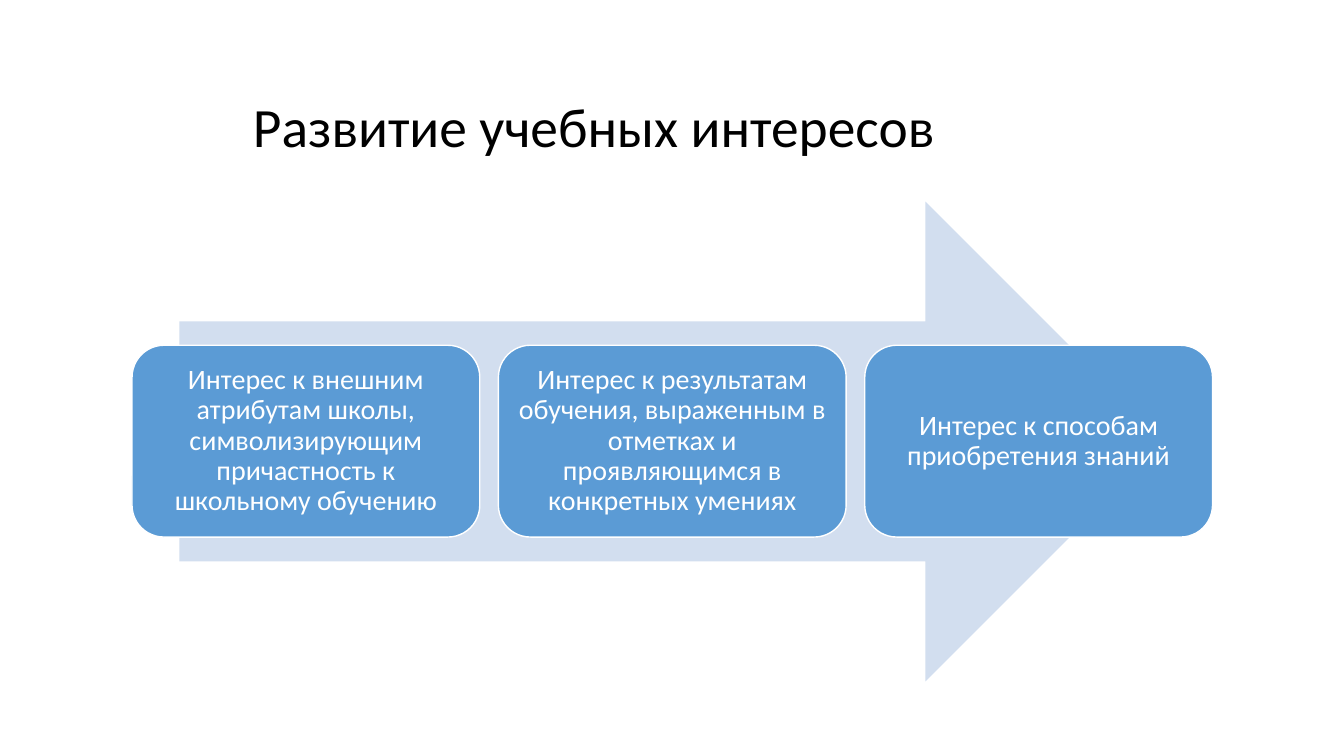
"""Build a slide on the development of learning interests."""
from dataclasses import dataclass

import pptx
import pptx.dml.color
import pptx.enum.shapes
import pptx.enum.text
import pptx.util


@dataclass(frozen=True)
class Theme:
    """Colours and type sizes of the slide."""
    font: str = "Calibri"
    title_size: float = 39.6
    stage_size: float = 20
    title_color: str = "000000"
    stage_text: str = "FFFFFF"
    stage_fill: str = "5B9BD5"
    stage_line: str = "FFFFFF"
    arrow_fill: str = "D2DEEF"


class SlideBuilder:
    """Add styled elements to one slide, with lengths in points."""

    def __init__(self, presentation, theme):
        """Start a title-only slide."""
        self.theme = theme
        self.slide = presentation.slides.add_slide(presentation.slide_layouts[5])

    def set_text(self, shape, text, size, color, alignment, inset):
        """Write one centred-vertically paragraph into a shape."""
        frame = shape.text_frame
        frame.text = text
        frame.word_wrap = True
        frame.auto_size = pptx.enum.text.MSO_AUTO_SIZE.NONE
        frame.vertical_anchor = pptx.enum.text.MSO_ANCHOR.MIDDLE
        frame.margin_left = frame.margin_right = pptx.util.Pt(inset)
        frame.margin_top = frame.margin_bottom = pptx.util.Pt(min(inset, 5.76))
        paragraph = frame.paragraphs[0]
        paragraph.alignment = alignment
        paragraph.line_spacing = 0.9
        font = paragraph.runs[0].font
        font.name = self.theme.font
        font.size = pptx.util.Pt(size)
        font.color.rgb = pptx.dml.color.RGBColor.from_string(color)

    def title(self, text, left, top, width, height):
        """Place and format the title placeholder."""
        shape = self.slide.shapes.title
        shape.left, shape.top = pptx.util.Pt(left), pptx.util.Pt(top)
        shape.width, shape.height = pptx.util.Pt(width), pptx.util.Pt(height)
        self.set_text(shape, text, self.theme.title_size, self.theme.title_color,
                      pptx.enum.text.PP_ALIGN.LEFT, 7.2)

    def filled_shape(self, kind, fill, left, top, width, height):
        """Add a flat preset shape without an outline."""
        box = [pptx.util.Pt(length) for length in (left, top, width, height)]
        shape = self.slide.shapes.add_shape(kind, *box)
        shape.shadow.inherit = False
        shape.fill.solid()
        shape.fill.fore_color.rgb = pptx.dml.color.RGBColor.from_string(fill)
        shape.line.fill.background()
        return shape

    def arrow(self, left, top, width, height):
        """Add the broad background arrow."""
        self.filled_shape(pptx.enum.shapes.MSO_SHAPE.RIGHT_ARROW,
                          self.theme.arrow_fill, left, top, width, height)

    def stage(self, text, left, top, width, height):
        """Add one rounded stage with its text."""
        shape = self.filled_shape(pptx.enum.shapes.MSO_SHAPE.ROUNDED_RECTANGLE,
                                  self.theme.stage_fill, left, top, width, height)
        shape.line.color.rgb = pptx.dml.color.RGBColor.from_string(self.theme.stage_line)
        shape.line.width = pptx.util.Pt(1)
        self.set_text(shape, text, self.theme.stage_size, self.theme.stage_text,
                      pptx.enum.text.PP_ALIGN.CENTER, 5.76)


def main():
    """Build and save the presentation."""
    presentation = pptx.Presentation()
    presentation.slide_width = pptx.util.Pt(960)
    presentation.slide_height = pptx.util.Pt(540)
    builder = SlideBuilder(presentation, Theme())
    builder.title("Развитие учебных интересов", 173.5, 70.5, 828, 44.6)
    builder.arrow(128.2, 144, 704.2, 342.7)
    stages = (
        "Интерес к внешним атрибутам школы, символизирующим причастность к школьному обучению",
        "Интерес к результатам обучения, выраженным в отметках и проявляющимся в конкретных умениях",
        "Интерес к способам приобретения знаний",
    )
    stage_width, gap = 248.4, 13.3
    for index, text in enumerate(stages):
        builder.stage(text, 94.3 + index * (stage_width + gap), 246.6, stage_width, 137)
    presentation.save("out.pptx")


if __name__ == "__main__":
    main()
